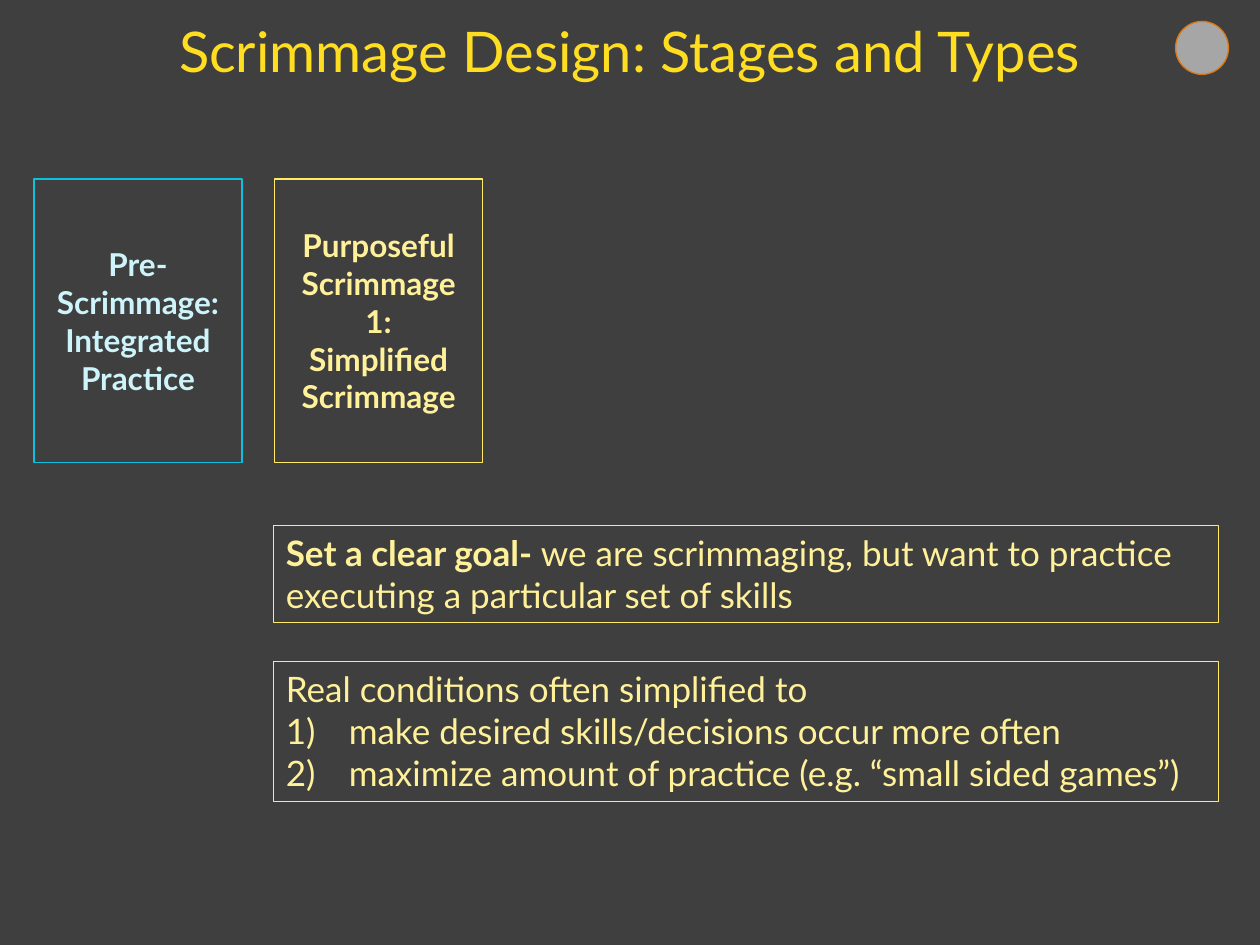
from pptx import Presentation
from pptx.dml.color import RGBColor
from pptx.enum.shapes import MSO_SHAPE
from pptx.enum.text import MSO_ANCHOR, PP_ALIGN
from pptx.oxml.xmlchemy import OxmlElement
from pptx.util import Inches, Pt

RECT, OVAL = MSO_SHAPE.RECTANGLE, MSO_SHAPE.OVAL
TOP, MID = MSO_ANCHOR.TOP, MSO_ANCHOR.MIDDLE
LEFT, MIDDLE = PP_ALIGN.LEFT, PP_ALIGN.CENTER

THEME = {
    "font": "Lato", "back": "3F3F3F", "title": "FFDE22",
    "blue": "CDF4FB", "blue_line": "0DC0DF",
    "gold": "FFF199", "gold_line": "FFEB66",
    "dot": "A6A6A6", "dot_line": "DD7811",
    "title_size": 32, "stage_size": 18, "note_size": 20, "line": 0.75,
}

TITLE = "Scrimmage Design: Stages and Types"
STAGES = [
    ("blue", ["Pre-Scrimmage:", "Integrated", "Practice"]),
    ("gold", ["Purposeful", "Scrimmage 1:", "Simplified Scrimmage"]),
]
NOTES = [
    (4.17, 0.77, [
        (False, [("Set a clear goal- ", True),
                 ("we are scrimmaging, but want to practice executing "
                  "a particular set of skills", False)]),
    ]),
    (5.25, 1.11, [
        (False, [("Real conditions often simplified to", False)]),
        (True, [("make desired skills/decisions occur more often", False)]),
        (True, [("maximize amount of practice (e.g. “small sided games”)", False)]),
    ]),
]
STAGE_LEFT, STAGE_STEP = 0.27, 1.91


def color(name):
    return RGBColor.from_string(THEME[name])


def add_box(slide, kind, area, line, fill=None):
    box = slide.shapes.add_shape(kind, *map(Inches, area))
    box.shadow.inherit = False
    if fill:
        box.fill.solid()
        box.fill.fore_color.rgb = color(fill)
    else:
        box.fill.background()
    box.line.color.rgb = color(line)
    box.line.width = Pt(THEME["line"])
    return box


def number(para):
    props = para._p.get_or_add_pPr()
    props.set("marL", str(Inches(0.5)))
    props.set("indent", str(Inches(-0.5)))
    mark = OxmlElement("a:buFont")
    mark.set("typeface", "+mj-lt")
    props.append(mark)
    mark = OxmlElement("a:buAutoNum")
    mark.set("type", "arabicParenR")
    props.append(mark)


def write(box, paras, size, tint, align, anchor):
    frame = box.text_frame
    frame.word_wrap = True
    frame.vertical_anchor = anchor
    for i, (listed, runs) in enumerate(paras):
        para = frame.add_paragraph() if i else frame.paragraphs[0]
        para.alignment = align
        if listed:
            number(para)
        for text, bold in runs:
            run = para.add_run()
            run.text = text
            run.font.name = THEME["font"]
            run.font.size = Pt(THEME[size])
            run.font.bold = bold
            run.font.color.rgb = color(tint)


def main():
    deck = Presentation()
    deck.slide_width, deck.slide_height = Inches(10), Inches(7.5)
    slide = deck.slides.add_slide(deck.slide_layouts[6])
    slide.background.fill.solid()
    slide.background.fill.fore_color.rgb = color("back")

    add_box(slide, OVAL, (9.33, 0.17, 0.42, 0.42), "dot_line", "dot")
    for top, height, paras in NOTES:
        box = add_box(slide, RECT, (2.17, top, 7.5, height), "gold_line")
        write(box, paras, "note_size", "gold", LEFT, TOP)
    for i, (tint, lines) in enumerate(STAGES):
        area = (STAGE_LEFT + i * STAGE_STEP, 1.42, 1.65, 2.25)
        box = add_box(slide, RECT, area, tint + "_line")
        paras = [(False, [(line, True)]) for line in lines]
        write(box, paras, "stage_size", tint, MIDDLE, MID)
    head = slide.shapes.add_textbox(*map(Inches, (0, 0.08, 10, 0.63)))
    write(head, [(False, [(TITLE, False)])], "title_size", "title", MIDDLE, MID)
    deck.save("out.pptx")


if __name__ == "__main__":
    main()
